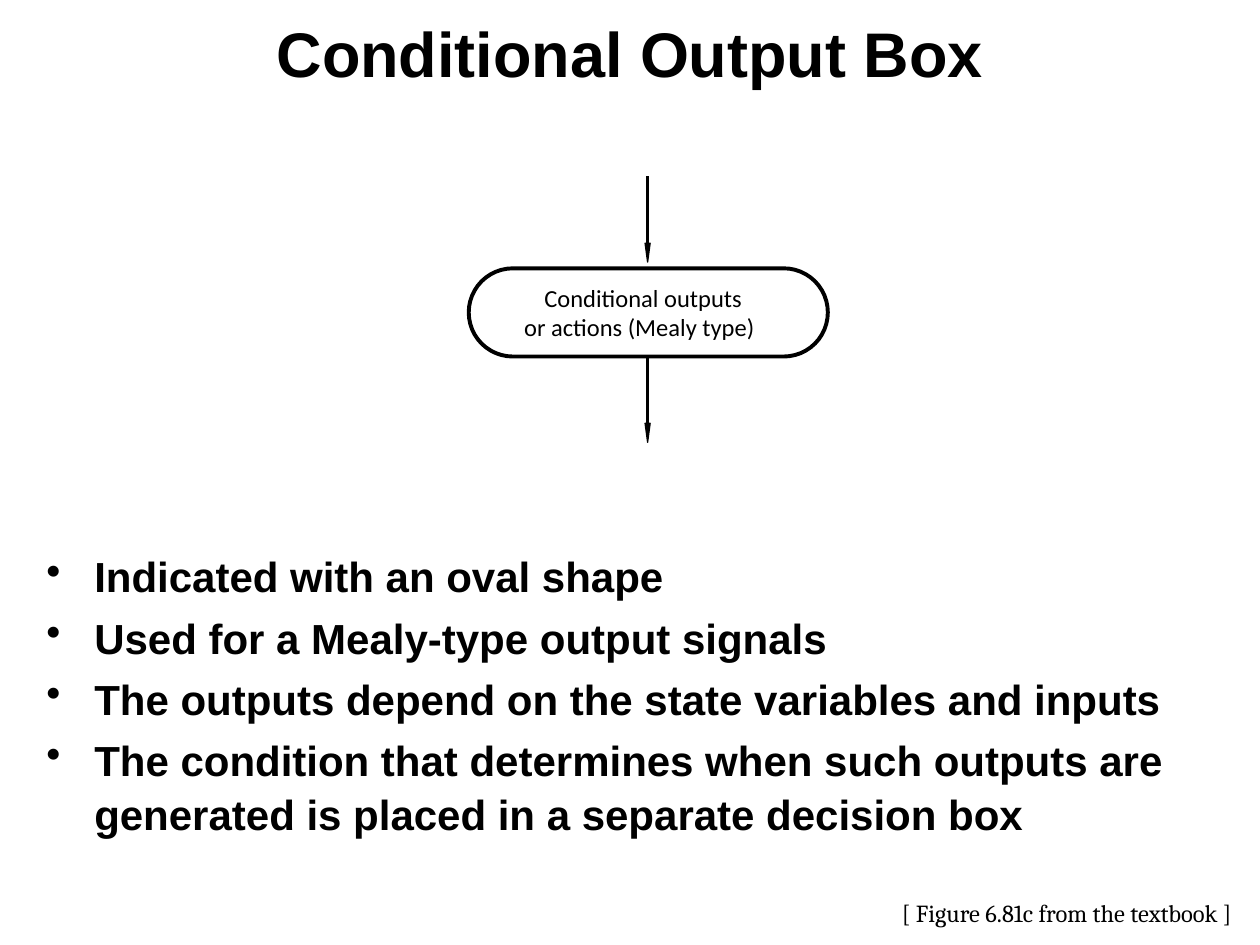
import pptx
import pptx.dml.color
import pptx.enum.shapes
import pptx.enum.text
import pptx.oxml.ns
import pptx.util
from lxml import etree

PX = 9144
BLACK = "000000"
BULLETS = [
    "Indicated with an oval shape",
    "Used for a Mealy-type output signals",
    "The outputs depend on the state variables and inputs",
    "The condition that determines when such outputs are generated is placed in a separate decision box",
]


def color(value):
    """Return the RGB colour for a hex string."""
    return pptx.dml.color.RGBColor.from_string(value)


def emu(*lengths):
    """Turn px lengths into EMU."""
    return [pptx.util.Emu(length * PX) for length in lengths]


def format_runs(paragraph, font_name, size, bold=False):
    """Set the font of every run in a paragraph."""
    for run in paragraph.runs:
        run.font.name = font_name
        run.font.size = pptx.util.Pt(size)
        run.font.bold = bold
        run.font.color.rgb = color(BLACK)


def add_line_of_text(slide, box, text, font_name, inset):
    """Add a single unwrapped line of 14 point text."""
    shape = slide.shapes.add_textbox(*emu(*box))
    frame = shape.text_frame
    frame.word_wrap = False
    frame.auto_size = pptx.enum.text.MSO_AUTO_SIZE.SHAPE_TO_FIT_TEXT
    frame.margin_left, frame.margin_right = emu(inset, inset)
    frame.margin_top = frame.margin_bottom = emu(inset // 2)[0]
    frame.text = text
    format_runs(frame.paragraphs[0], font_name, 14)


def add_title(slide, box, text):
    """Place and format the title placeholder."""
    title = slide.shapes.title
    title.left, title.top, title.width, title.height = emu(*box)
    frame = title.text_frame
    frame.text = text
    frame.vertical_anchor = pptx.enum.text.MSO_ANCHOR.MIDDLE
    frame.paragraphs[0].alignment = pptx.enum.text.PP_ALIGN.CENTER
    format_runs(frame.paragraphs[0], "Arial", 36, True)


def add_bullets(slide, box, items):
    """Add the bulleted list."""
    frame = slide.shapes.add_textbox(*emu(*box)).text_frame
    frame.word_wrap = True
    frame.text = "\n".join(items)
    indent = emu(38)[0]
    for paragraph in frame.paragraphs:
        paragraph.line_spacing = 1.06
        paragraph.space_before = pptx.util.Pt(4.5)
        format_runs(paragraph, "Arial", 24, True)
        properties = paragraph._p.get_or_add_pPr()
        properties.set("marL", str(indent))
        properties.set("indent", str(-indent))
        bullet = etree.SubElement(properties, pptx.oxml.ns.qn("a:buChar"))
        bullet.set("char", "•")


def add_down_arrow(slide, x, top, shaft, head_width, head_length):
    """Add a vertical shaft with a slim solid head below it."""
    neck = top + shaft
    line = slide.shapes.add_connector(
        pptx.enum.shapes.MSO_CONNECTOR.STRAIGHT, *emu(x, top, x, neck))
    line.line.color.rgb = color(BLACK)
    line.line.width = pptx.util.Pt(1.5)
    etree.SubElement(line._element.spPr, pptx.oxml.ns.qn("a:effectLst"))
    half = head_width // 2
    builder = slide.shapes.build_freeform(x - half, neck, scale=PX)
    builder.add_line_segments([(x, neck + head_length), (x + half, neck)], close=True)
    head = builder.convert_to_shape()
    head.shadow.inherit = False
    head.fill.solid()
    head.fill.fore_color.rgb = color(BLACK)
    head.line.color.rgb = color(BLACK)
    head.line.width = 0


def add_output_box(slide, box):
    """Add the oval box with its two label lines and its arrows."""
    left, top, width, height = box
    oval = slide.shapes.add_shape(
        pptx.enum.shapes.MSO_SHAPE.ROUNDED_RECTANGLE, *emu(*box))
    oval.adjustments[0] = 0.5
    oval.shadow.inherit = False
    oval.fill.background()
    oval.line.color.rgb = color(BLACK)
    oval.line.width = pptx.util.Pt(2.25)
    labels = [
        ((left + 60, top + 12, 159, 23), "Conditional outputs"),
        ((left + 44, top + 35, 187, 23), "or actions (Mealy type)"),
    ]
    for label_box, text in labels:
        add_line_of_text(slide, label_box, text, "Calibri", 0)
    for arrow_top in (top - 73, top + height):
        add_down_arrow(slide, left + width // 2, arrow_top, 53, 4, 15)


def main():
    """Build the slide and save it."""
    presentation = pptx.Presentation()
    presentation.slide_width, presentation.slide_height = emu(1000, 750)
    slide = presentation.slides.add_slide(presentation.slide_layouts[5])
    add_title(slide, (0, 4, 1000, 75), "Conditional Output Box")
    add_bullets(slide, (27, 430, 960, 283), BULLETS)
    add_line_of_text(slide, (706, 708, 289, 34),
                     "[ Figure 6.81c from the textbook ]", "Cambria", 10)
    add_output_box(slide, (372, 213, 285, 70))
    presentation.save("out.pptx")


if __name__ == "__main__":
    main()
